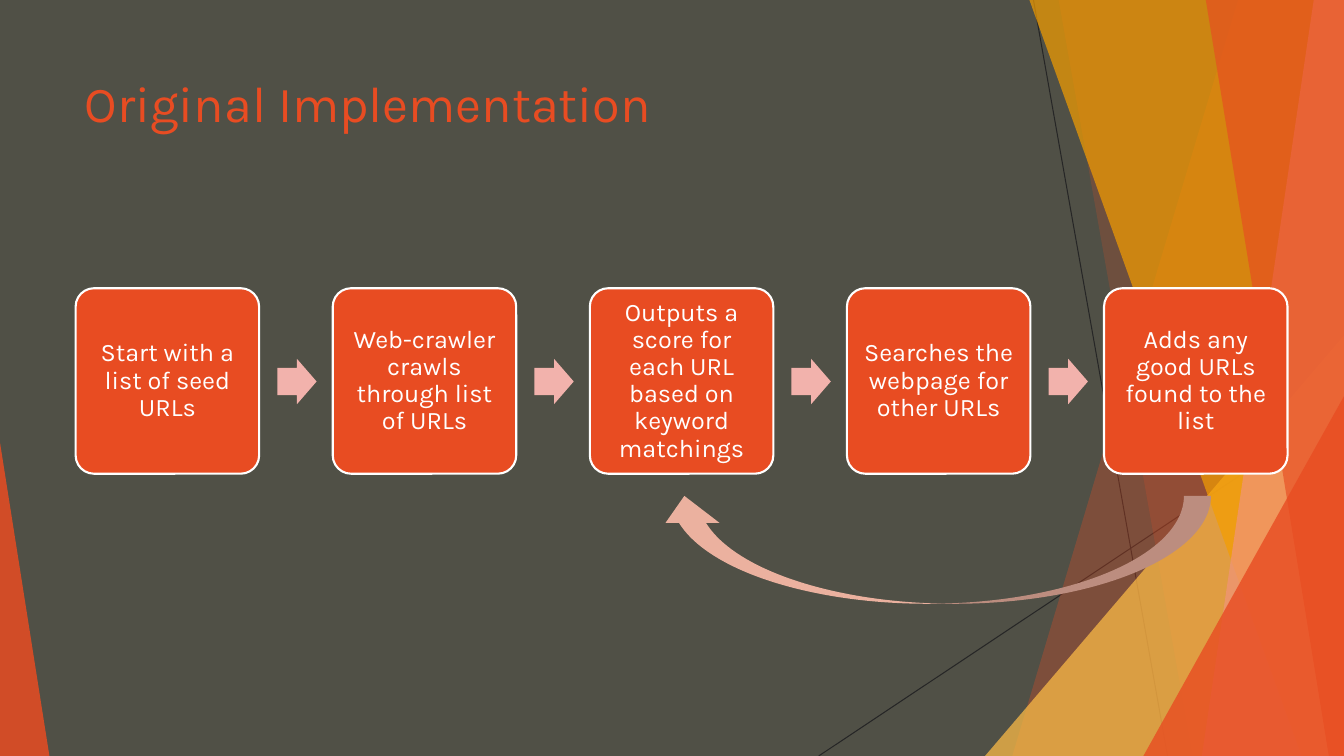
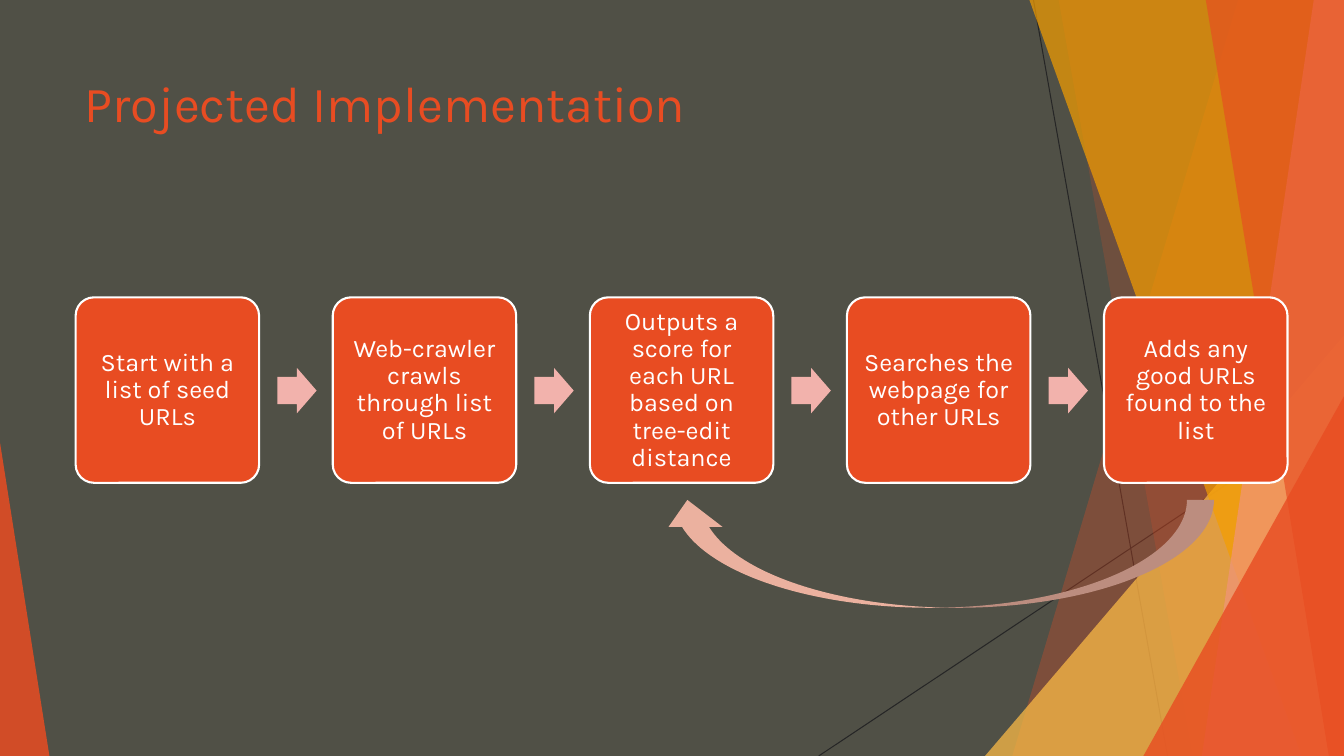
"""Build two slides that compare web-crawler implementations as process flows."""
import pptx
import pptx.util
import pptx.dml.color
import pptx.enum.shapes
import pptx.enum.text
import pptx.oxml
import pptx.oxml.ns

Inches = pptx.util.Inches
Pt = pptx.util.Pt
RGBColor = pptx.dml.color.RGBColor
SHAPE = pptx.enum.shapes.MSO_SHAPE
ANCHOR = pptx.enum.text.MSO_ANCHOR
ALIGN = pptx.enum.text.PP_ALIGN
qn = pptx.oxml.ns.qn

STONE = RGBColor(0x50, 0x50, 0x46)
INK = RGBColor(0x26, 0x26, 0x26)
RED = RGBColor(0xE8, 0x4C, 0x22)
GOLD = RGBColor(0xFF, 0xBD, 0x47)
AMBER = RGBColor(0xF4, 0x9D, 0x00)
CORAL = RGBColor(0xF1, 0x94, 0x7A)
PINK = RGBColor(0xF2, 0xB2, 0xAC)
PEACH = RGBColor(0xEB, 0xB1, 0x9F)
WHITE = RGBColor(0xFF, 0xFF, 0xFF)
FONT = "Karla"
WIDE, TALL = 13.33, 7.5
SPACE = pptx.oxml.ns.nsdecls("a")


def paint(shape, color, alpha=100):
    shape.shadow.inherit = False
    shape.fill.solid()
    shape.fill.fore_color.rgb = color
    shape.line.fill.background()
    if alpha < 100:
        tone = shape.element.spPr.find(qn("a:solidFill"))[0]
        tone.append(pptx.oxml.parse_xml(
            f'<a:alpha {SPACE} val="{alpha * 1000}"/>'))


def style(frame, size, color, align):
    para = frame.paragraphs[0]
    para.alignment = align
    for run in para.runs:
        run.font.name = FONT
        run.font.size = Pt(size)
        run.font.color.rgb = color


deck = pptx.Presentation()
deck.slide_width = Inches(WIDE)
deck.slide_height = Inches(TALL)

layout = deck.slide_layouts[5]
layout.background.fill.solid()
layout.background.fill.fore_color.rgb = STONE
for holder in list(layout.placeholders):
    if holder.placeholder_format.idx:
        layout.shapes.element.remove(holder.element)
    else:
        holder.left, holder.top = Inches(0.74), Inches(0.67)
        holder.width, holder.height = Inches(9.4), Inches(1.44)
        holder.text_frame.vertical_anchor = ANCHOR.TOP

pages = [deck.slides.add_slide(layout) for _ in range(2)]
draft = pages[0].shapes
decor = []

for ends in [(10.25, 0, 11.58, TALL), (WIDE, 4.03, 8.12, TALL)]:
    line = draft.add_connector(
        pptx.enum.shapes.MSO_CONNECTOR.STRAIGHT, *[Inches(x) for x in ends])
    line.line.color.rgb = INK
    line.line.width = Pt(0.75)
    line.element.spPr.append(pptx.oxml.parse_xml(f"<a:effectLst {SPACE}/>"))
    decor.append(line)

pieces = [
    ("band", (12.28, 10.04), RED, 30),
    ("band", (10.5, 11.83), RED, 20),
    ("spike", (9.77, 3.33, 3.56, 1), GOLD, 72),
    ("band", (10.21, 12.91), AMBER, 70),
    ("band", (13.03, 11.92), CORAL, 70),
    ("band", (11.96, 13.18), RED, 65),
    ("spike", (11.34, 3.93, 1.99, 1), RED, 80),
    ("spike", (0, 4.39, 0.49, 0), RED, 85),
]
for kind, dims, color, alpha in pieces:
    if kind == "band":
        head, foot = dims
        pen = draft.build_freeform(Inches(head), 0)
        pen.add_line_segments(
            [(Inches(x), Inches(y))
             for x, y in [(WIDE, 0), (WIDE, TALL), (foot, TALL)]])
        shape = pen.convert_to_shape()
    else:
        left, top, width, tip = dims
        shape = draft.add_shape(
            SHAPE.ISOSCELES_TRIANGLE, Inches(left), Inches(top),
            Inches(width), Inches(TALL - top))
        shape.adjustments[0] = tip
    paint(shape, color, alpha)
    decor.append(shape)

for shape in decor:
    layout.shapes.element.append(shape.element)

flows = [
    ("Original Implementation", "keyword matchings", 2.86, 6.52, 4.92),
    ("Projected Implementation", "tree-edit distance", 2.95, 6.55, 4.96),
]
for page, (title, method, top, left, low) in zip(pages, flows):
    page.shapes.title.text_frame.text = title
    style(page.shapes.title.text_frame, 36, RED, ALIGN.LEFT)
    steps = [
        "Start with a list of seed URLs",
        "Web-crawler crawls through list of URLs",
        f"Outputs a score for each URL based on {method}",
        "Searches the webpage for other URLs",
        "Adds any good URLs found to the list",
    ]
    for i, step in enumerate(steps):
        x = 0.75 + 2.55 * i
        if i:
            arrow = page.shapes.add_shape(
                SHAPE.RIGHT_ARROW, Inches(x - 0.55), Inches(top + 0.7),
                Inches(0.39), Inches(0.45))
            arrow.adjustments[0] = 0.6
            paint(arrow, PINK)
        card = page.shapes.add_shape(
            SHAPE.ROUNDED_RECTANGLE, Inches(x), Inches(top),
            Inches(1.82), Inches(1.84))
        card.adjustments[0] = 0.1
        paint(card, RED)
        card.line.color.rgb = WHITE
        card.line.width = Pt(1.5)
        frame = card.text_frame
        frame.text = step
        frame.word_wrap = True
        frame.vertical_anchor = ANCHOR.MIDDLE
        frame.margin_left = frame.margin_right = Inches(0.07)
        frame.margin_top = frame.margin_bottom = Inches(0.07)
        frame.paragraphs[0].line_spacing = 0.9
        style(frame, 18, WHITE, ALIGN.CENTER)
    loop = page.shapes.add_shape(
        SHAPE.CURVED_UP_ARROW, Inches(left), Inches(low),
        Inches(5.49), Inches(1.07))
    loop.element.spPr.find(qn("a:xfrm")).set("flipH", "1")
    paint(loop, PEACH)

deck.save("out.pptx")
